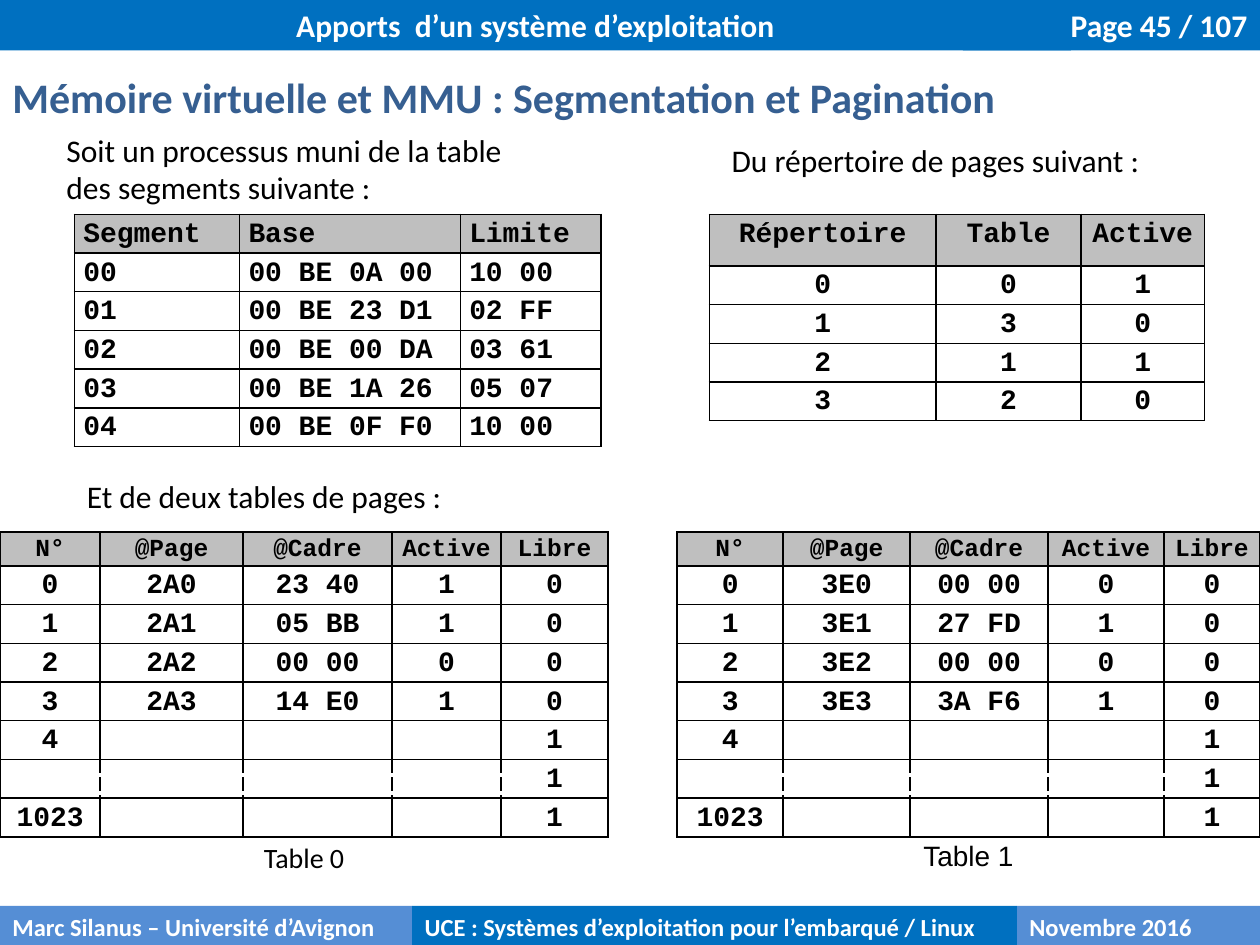
import pptx
import pptx.dml.color
import pptx.enum.shapes
import pptx.enum.text
import pptx.util
from lxml import etree
from pptx.oxml.ns import qn

Cm = pptx.util.Cm
ALIGN = pptx.enum.text.PP_ALIGN
LEFT, CENTER, RIGHT = ALIGN.LEFT, ALIGN.CENTER, ALIGN.RIGHT
BLUE, LIGHT_BLUE, GREY, BLACK, WHITE = "0070C0", "558ED5", "BFBFBF", "000000", "FFFFFF"
BODY_ROW = 0.78

BANDS = [
    ("Page 45 / 107", 19.41, 0, 5.99, 1.02, BLUE, 18, RIGHT),
    ("Apports  d’un système d’exploitation", 0, 0, 21.59, 1.02, BLUE, 18, CENTER),
    ("Marc Silanus – Université d’Avignon", 0, 18.26, 8.31, 0.86, LIGHT_BLUE, 14, LEFT),
    ("Novembre 2016", 20.5, 18.26, 4.9, 0.86, LIGHT_BLUE, 14, LEFT),
    ("UCE : Systèmes d’exploitation pour l’embarqué / Linux", 8.31, 18.26, 12.19, 0.86, BLUE, 14, LEFT),
]

TEXTS = [
    (["Mémoire virtuelle et MMU : Segmentation et Pagination"], 0, 1.32, 25.4, 1.27, 24, "365F91", True),
    (["Soit un processus muni de la table", "des segments suivante :"], 1.09, 2.51, 10.01, 1.8, 18, BLACK, False),
    (["Du répertoire de pages suivant :"], 14.5, 2.72, 8.79, 1.02, 18, BLACK, False),
    (["Et de deux tables de pages :"], 1.5, 9.5, 7.75, 1.02, 18, BLACK, False),
]

SEGMENTS = [
    ["Segment", "Base", "Limite"],
    ["00", "00 BE 0A 00", "10 00"],
    ["01", "00 BE 23 D1", "02 FF"],
    ["02", "00 BE 00 DA", "03 61"],
    ["03", "00 BE 1A 26", "05 07"],
    ["04", "00 BE 0F F0", "10 00"],
]

DIRECTORY = [
    ["Répertoire", "Table", "Active"],
    ["0", "0", "1"],
    ["1", "3", "0"],
    ["2", "1", "1"],
    ["3", "2", "0"],
]

PAGE_HEADER = ["N°", "@Page", "@Cadre", "Active", "Libre"]
UNUSED_PAGES = [["4", "", "", "", "1"], ["", "", "", "", "1"], ["1023", "", "", "", "1"]]
PAGES_0 = [
    ["0", "2A0", "23 40", "1", "0"],
    ["1", "2A1", "05 BB", "1", "0"],
    ["2", "2A2", "00 00", "0", "0"],
    ["3", "2A3", "14 E0", "1", "0"],
]
PAGES_1 = [
    ["0", "3E0", "00 00", "0", "0"],
    ["1", "3E1", "27 FD", "1", "0"],
    ["2", "3E2", "00 00", "0", "0"],
    ["3", "3E3", "3A F6", "1", "0"],
]
PAGE_WIDTHS = [2.02, 2.88, 3, 2.2, 2.16, 1.39, 2.14, 2.56, 2.78, 2.34, 1.93]
GAP_COLUMN = 5
ELLIPSIS_ROW = 6
CAPTIONS = [("Table 0", 0, "Calibri"), ("Table 1", 6, "Arial")]


def color(value):
    return pptx.dml.color.RGBColor.from_string(value)


def write(para, text, size, font, ink, bold, align=LEFT):
    para.alignment = align
    span = para.add_run()
    span.text = text
    span.font.size = pptx.util.Pt(size)
    span.font.name = font
    span.font.bold = bold
    span.font.color.rgb = color(ink)


def add_band(page, text, left, top, width, height, fill, size, align):
    box = page.shapes.add_shape(
        pptx.enum.shapes.MSO_SHAPE.RECTANGLE, Cm(left), Cm(top), Cm(width), Cm(height))
    box.shadow.inherit = False
    box.fill.solid()
    box.fill.fore_color.rgb = color(fill)
    box.line.fill.background()
    box.text_frame.word_wrap = True
    box.text_frame.vertical_anchor = pptx.enum.text.MSO_ANCHOR.TOP
    write(box.text_frame.paragraphs[0], text, size, "Calibri", WHITE, True, align)


def add_text(page, lines, left, top, width, height, size, ink, bold):
    frame = page.shapes.add_textbox(Cm(left), Cm(top), Cm(width), Cm(height)).text_frame
    frame.word_wrap = True
    for index, line in enumerate(lines):
        para = frame.add_paragraph() if index else frame.paragraphs[0]
        write(para, line, size, "Calibri", ink, bold)


def set_borders(cell, sides="LRTB", dashed=""):
    properties = cell._tc.get_or_add_tcPr()
    for side in "LRTB":
        line = etree.SubElement(properties, qn(f"a:ln{side}"), w="12700")
        if side not in sides:
            etree.SubElement(line, qn("a:noFill"))
            continue
        fill = etree.SubElement(line, qn("a:solidFill"))
        etree.SubElement(fill, qn("a:srgbClr"), val=BLACK)
        etree.SubElement(line, qn("a:prstDash"), val="dash" if side in dashed else "solid")


def fill_cell(cell, text, size=16, align=CENTER, font="Courier New", bold=True, fill=None):
    cell.margin_left = cell.margin_right = Cm(0.18)
    cell.margin_top = cell.margin_bottom = 0
    if fill:
        cell.fill.solid()
        cell.fill.fore_color.rgb = color(fill)
    else:
        cell.fill.background()
    para = cell.text_frame.paragraphs[0]
    para.line_spacing = 1.15
    if text:
        write(para, text, size, font, BLACK, bold, align)
    else:
        etree.SubElement(para._p, qn("a:endParaRPr"), sz="1000")


def add_grid(page, left, top, widths, heights):
    frame = page.shapes.add_table(
        len(heights), len(widths), Cm(left), Cm(top), Cm(sum(widths)), Cm(sum(heights)))
    grid = frame.table
    grid.first_row = grid.horz_banding = False
    for column, width in zip(grid.columns, widths):
        column.width = Cm(width)
    for row, height in zip(grid.rows, heights):
        row.height = Cm(height)
    return grid


def add_plain_table(page, rows, left, top, widths, header_height, align):
    heights = [header_height] + [BODY_ROW] * (len(rows) - 1)
    grid = add_grid(page, left, top, widths, heights)
    for r, row in enumerate(rows):
        for c, text in enumerate(row):
            cell = grid.cell(r, c)
            set_borders(cell)
            fill_cell(cell, text, align=align, fill=None if r else GREY)


def add_page_tables(page):
    first = [PAGE_HEADER] + PAGES_0 + UNUSED_PAGES
    second = [PAGE_HEADER] + PAGES_1 + UNUSED_PAGES
    rows = [a + [""] + b for a, b in zip(first, second)]
    grid = add_grid(page, 0, 10.72, PAGE_WIDTHS, [0.69] + [BODY_ROW] * (len(rows) - 1) + [0.78])
    for r, row in enumerate(rows):
        for c, text in enumerate(row):
            cell = grid.cell(r, c)
            gap = c == GAP_COLUMN
            dashed = ""
            if r == ELLIPSIS_ROW and not gap:
                position = c % (GAP_COLUMN + 1)
                dashed = ("L" if position > 0 else "") + ("R" if position < 4 else "")
            set_borders(cell, "LR" if gap else "LRTB", dashed)
            fill_cell(cell, text, 16 if r else 14, fill=None if r or gap else GREY)
    last = len(rows)
    for c in range(len(PAGE_WIDTHS)):
        cell = grid.cell(last, c)
        set_borders(cell, "" if c == GAP_COLUMN else "T")
        if c not in [start for _, start, _ in CAPTIONS]:
            fill_cell(cell, "")
    for text, start, font in CAPTIONS:
        cell = grid.cell(last, start)
        cell.merge(grid.cell(last, start + 4))
        fill_cell(cell, text, font=font, bold=False)


def main():
    deck = pptx.Presentation()
    deck.slide_width, deck.slide_height = Cm(25.4), Cm(19.05)
    page = deck.slides.add_slide(deck.slide_layouts[6])
    for band in BANDS:
        add_band(page, *band)
    for text in TEXTS:
        add_text(page, *text)
    add_plain_table(page, SEGMENTS, 1.5, 4.32, [3.33, 4.45, 2.84], BODY_ROW, LEFT)
    add_plain_table(page, DIRECTORY, 14.3, 4.32, [4.57, 2.92, 2.49], 1.04, CENTER)
    add_page_tables(page)
    deck.save("out.pptx")


if __name__ == "__main__":
    main()
